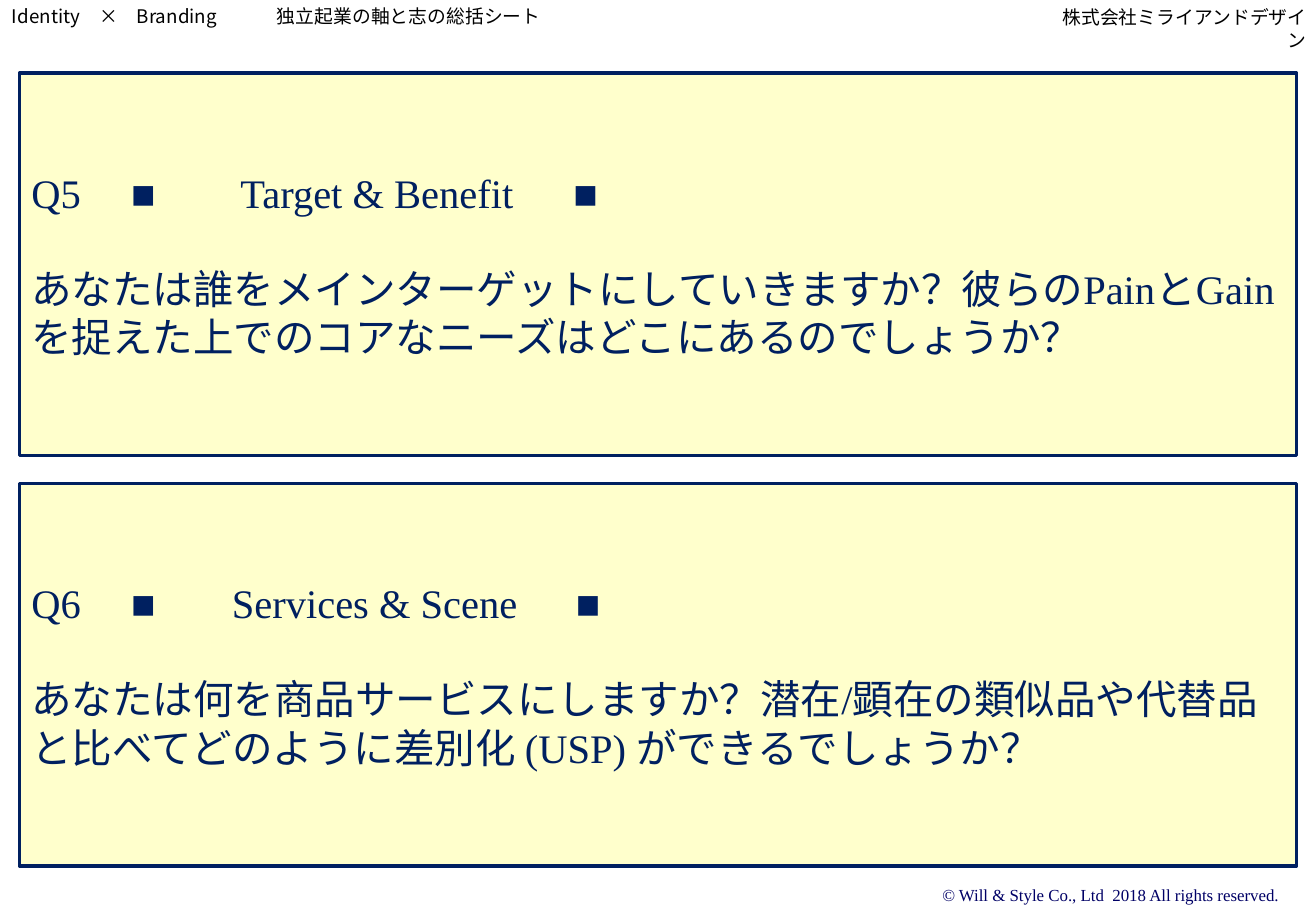
from lxml import etree
from pptx import Presentation
from pptx import util as u
from pptx.dml.color import RGBColor
from pptx.enum import shapes, text
from pptx.oxml.ns import qn

COLORS = {"navy": "002060", "cream": "FFFFCC", "black": "000000", "legal": "000066"}
SANS, SERIF = "Noto Sans CJK JP", "Times New Roman"


class Sheet:
    """Question sheet style bound to the current page."""

    def __init__(self, page):
        self.page = page

    def color(self, name):
        return RGBColor.from_string(COLORS[name])

    def fill_para(self, para, words, size, face, color, tabs=()):
        para.text = words
        if tabs:
            stops = etree.SubElement(para._p.get_or_add_pPr(), qn("a:tabLst"))
            for stop in tabs:
                etree.SubElement(stops, qn("a:tab"), pos=str(u.Inches(stop)), algn="l")
        font = para.font
        font.size, font.name = u.Pt(size), face
        font.color.rgb = self.color(color)
        etree.SubElement(font._rPr, qn("a:ea"), typeface=SANS)

    def label(self, place, words, size, face, color, align=text.PP_ALIGN.LEFT, tabs=()):
        box = self.page.shapes.add_textbox(*map(u.Inches, place))
        box.text_frame.word_wrap = True
        para = box.text_frame.paragraphs[0]
        para.alignment = align
        self.fill_para(para, words, size, face, color, tabs)

    def question(self, top, title, tabs, words):
        box = self.page.shapes.add_shape(
            shapes.MSO_SHAPE.RECTANGLE,
            u.Inches(0.16), u.Inches(top), u.Inches(10.51), u.Inches(3.15))
        box.shadow.inherit = False
        box.fill.solid()
        box.fill.fore_color.rgb = self.color("cream")
        box.line.color.rgb = self.color("navy")
        box.line.width = u.Pt(2)
        frame = box.text_frame
        frame.word_wrap = True
        frame.vertical_anchor = text.MSO_ANCHOR.MIDDLE
        heading, body = frame.paragraphs[0], frame.add_paragraph()
        heading.alignment = body.alignment = text.PP_ALIGN.LEFT
        body.space_before = u.Pt(28)
        self.fill_para(heading, title, 24, SERIF, "navy", tabs)
        self.fill_para(body, words, 24, SERIF, "navy")


def main():
    deck = Presentation()
    deck.slide_width, deck.slide_height = u.Inches(10.83), u.Inches(7.5)
    sheet = Sheet(deck.slides.add_slide(deck.slide_layouts[6]))
    right = text.PP_ALIGN.RIGHT

    sheet.label((6.48, 7.23, 4.14, 0.27),
                "© Will & Style Co., Ltd  2018 All rights reserved.",
                10, SERIF, "legal", right)
    sheet.label((0, -0.01, 9.01, 0.29),
                "Identity　×　Branding\t独立起業の軸と志の総括シート",
                11.1, SANS, "black", tabs=[2.18])
    sheet.label((8.55, 0, 2.3, 0.29), "株式会社ミライアンドデザイン",
                11.1, SANS, "black", right)

    questions = [
        ("Q5\t■\tTarget & Benefit\t■", [0.82, 1.72, 4.46],
         "あなたは誰をメインターゲットにしていきますか？彼らのPainとGainを捉えた上でのコアなニーズはどこにあるのでしょうか？"),
        ("Q6\t■\tServices & Scene\t■", [0.82, 1.65, 4.48],
         "あなたは何を商品サービスにしますか？潜在/顕在の類似品や代替品と比べてどのように差別化 (USP) ができるでしょうか？"),
    ]
    for index, (title, tabs, words) in enumerate(questions):
        sheet.question(0.6 + 3.38 * index, title, tabs, words)

    deck.save("out.pptx")


if __name__ == "__main__":
    main()
